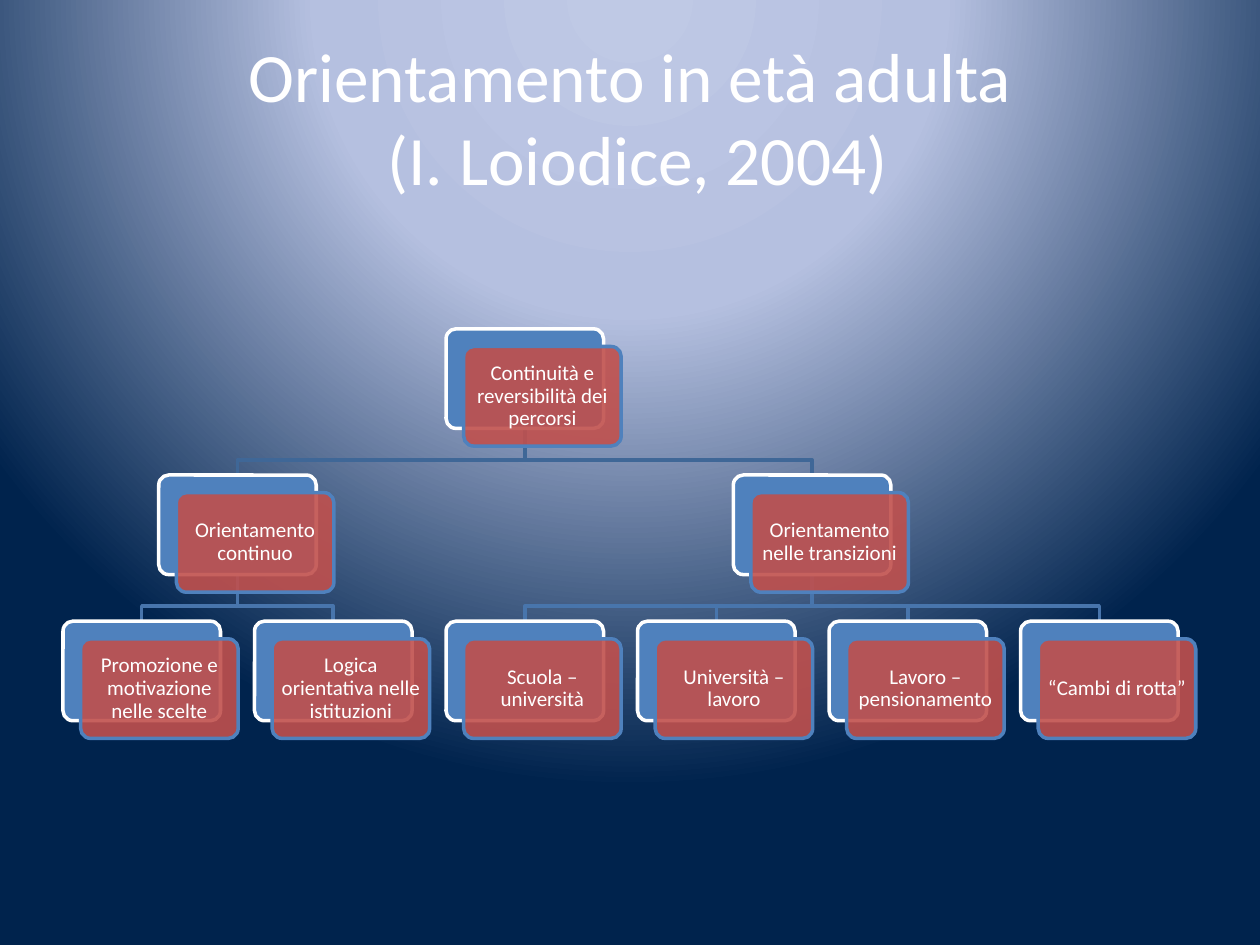
from pptx import Presentation
from pptx.dml.color import RGBColor
from pptx.enum.shapes import MSO_SHAPE
from pptx.enum.text import MSO_ANCHOR, MSO_AUTO_SIZE, PP_ALIGN
from pptx.oxml import parse_xml
from pptx.oxml.ns import nsdecls, qn
from pptx.oxml.xmlchemy import OxmlElement
from pptx.util import Inches, Pt

COLORS = {
    "white": "FFFFFF", "blue": "4F81BD", "red": "C0504D",
    "upper_link": "3F6797", "lower_link": "4875AC",
    "glow": "BFC9E5", "halo": "B5C0E0", "night": "00234D",
}
TITLE = "Orientamento in età adulta\v (I. Loiodice, 2004)"

# Each node: text, column, row, parent
NODES = {
    "root": ("Continuità e reversibilità dei percorsi", 2, 0, None),
    "ongoing": ("Orientamento continuo", 0.5, 1, "root"),
    "transitions": ("Orientamento nelle transizioni", 3.5, 1, "root"),
    "choices": ("Promozione e motivazione nelle scelte", 0, 2, "ongoing"),
    "institutions": ("Logica orientativa nelle istituzioni", 1, 2, "ongoing"),
    "school": ("Scuola – università", 2, 2, "transitions"),
    "university": ("Università – lavoro", 3, 2, "transitions"),
    "work": ("Lavoro – pensionamento", 4, 2, "transitions"),
    "turns": ("“Cambi di rotta”", 5, 2, "transitions"),
}


class TreeSlide:
    """Style, grid and current slide of a tree diagram."""

    font = "Calibri"
    left, top = 0.5, 2.61
    column_step, row_step = 1.52, 1.16
    width, height = 1.25, 0.79
    offset, bend = 0.14, 0.25

    def __init__(self, deck):
        self.page = deck.slides.add_slide(deck.slide_layouts[5])

    def color(self, name):
        return RGBColor.from_string(COLORS[name])

    def place(self, column, row):
        return self.left + column * self.column_step, self.top + row * self.row_step

    def background(self, stops):
        marks = "".join(
            f'<a:gs pos="{share * 1000}"><a:srgbClr val="{COLORS[name]}"/></a:gs>'
            for share, name in stops)
        self.page.element.cSld.insert(0, parse_xml(
            f'<p:bg {nsdecls("p", "a")}><p:bgPr><a:gradFill rotWithShape="1">'
            f'<a:gsLst>{marks}</a:gsLst><a:path path="circle">'
            '<a:fillToRect l="50000" t="-80000" r="50000" b="180000"/></a:path>'
            '</a:gradFill><a:effectLst/></p:bgPr></p:bg>'))

    def label(self, shape, text, size):
        frame = shape.text_frame
        frame.text = text
        frame.word_wrap = True
        frame.auto_size = MSO_AUTO_SIZE.NONE
        frame.vertical_anchor = MSO_ANCHOR.MIDDLE
        para = frame.paragraphs[0]
        para.alignment = PP_ALIGN.CENTER
        for span in para.runs:
            span.font.name = self.font
            span.font.size = Pt(size)
            span.font.color.rgb = self.color("white")
        return frame

    def title(self, text):
        box = self.page.shapes.title
        box.left, box.top, box.width, box.height = map(Inches, (0.5, 0.3, 9, 1.25))
        self.label(box, text, 39.6)

    def outline(self, shape, color):
        shape.shadow.inherit = False
        shape.line.color.rgb = self.color(color)
        shape.line.width = Pt(2)

    def link(self, parent, child, color):
        (start_x, start_y), (end_x, end_y) = self.place(*parent), self.place(*child)
        start_x, end_x = start_x + self.width / 2, end_x + self.width / 2
        start_y += self.height
        turn_y = start_y + self.bend
        points = [(start_x, turn_y), (end_x, turn_y), (end_x, end_y)]
        builder = self.page.shapes.build_freeform(Inches(start_x), Inches(start_y))
        builder.add_line_segments(
            [(Inches(x), Inches(y)) for x, y in points], close=False)
        elbow = builder.convert_to_shape()
        elbow.fill.background()
        self.outline(elbow, color)

    def card(self, x, y, fill, line):
        box = self.page.shapes.add_shape(
            MSO_SHAPE.ROUNDED_RECTANGLE,
            *map(Inches, (x, y, self.width, self.height)))
        box.adjustments[0] = 0.1
        box.fill.solid()
        box.fill.fore_color.rgb = self.color(fill)
        self.outline(box, line)
        return box

    def node(self, text, column, row):
        x, y = self.place(column, row)
        self.card(x, y, "blue", "white")
        front = self.card(x + self.offset, y + self.offset, "red", "blue")
        alpha = OxmlElement("a:alpha")
        alpha.set("val", "90000")
        front.element.spPr.find(f'{qn("a:solidFill")}/{qn("a:srgbClr")}').append(alpha)
        frame = self.label(front, text, 12)
        frame.margin_left = frame.margin_right = Inches(0.03)
        frame.margin_top = frame.margin_bottom = Inches(0.03)
        frame.paragraphs[0].line_spacing = 0.9


def main():
    deck = Presentation()
    deck.slide_width, deck.slide_height = Inches(10), Inches(7.5)
    tree = TreeSlide(deck)

    # Background and title
    tree.background([(0, "glow"), (40, "halo"), (100, "night")])
    tree.title(TITLE)

    # Links lie behind the cards
    for _, column, row, parent in NODES.values():
        if parent:
            color = "upper_link" if row == 1 else "lower_link"
            tree.link(NODES[parent][1:3], (column, row), color)

    # Cards
    for text, column, row, _ in NODES.values():
        tree.node(text, column, row)

    deck.save("out.pptx")


if __name__ == "__main__":
    main()
